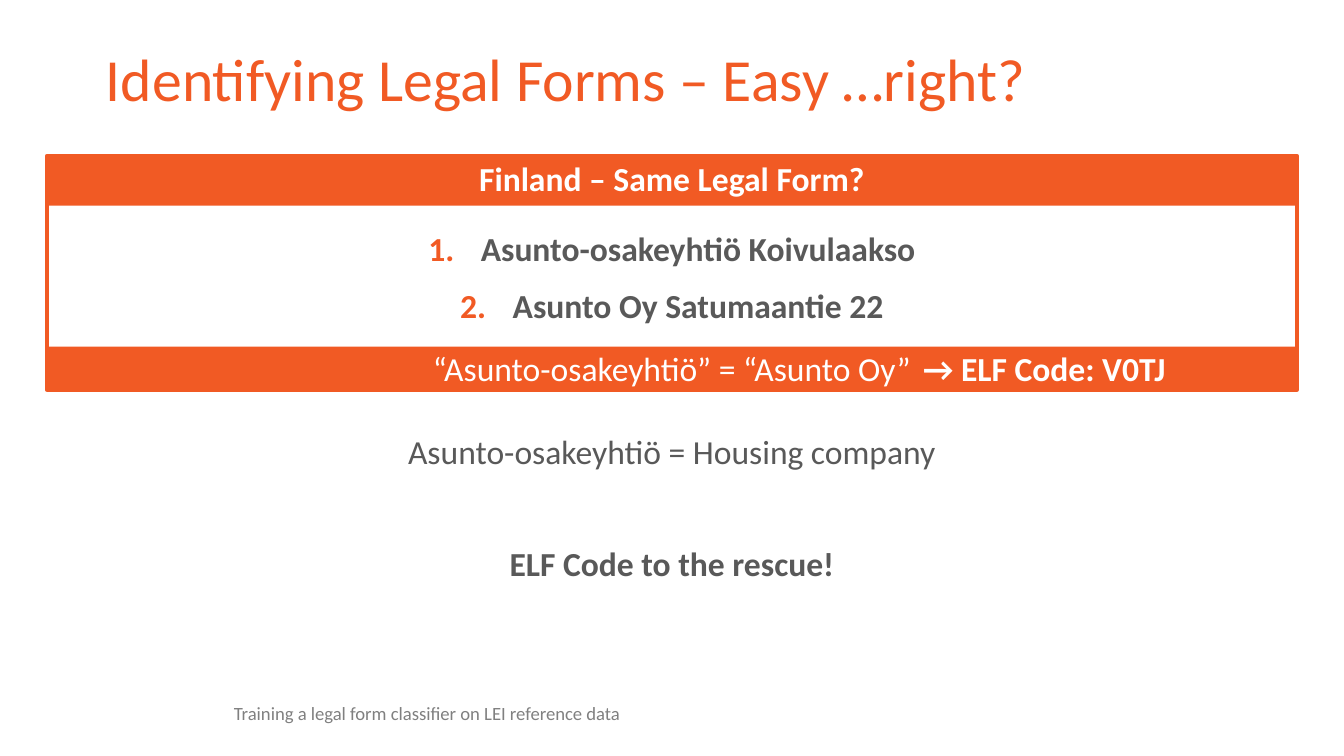
"""Builds a slide on Finnish legal forms and their shared ELF code."""
from lxml.etree import SubElement
from pptx import Presentation
from pptx.dml.color import RGBColor
from pptx.enum.shapes import MSO_SHAPE
from pptx.enum.text import MSO_ANCHOR, PP_ALIGN
from pptx.oxml.ns import qn
from pptx.util import Inches, Pt

HUES = {"orange": "F15A24", "grey": "595959", "pale": "808080", "white": "FFFFFF"}

deck = Presentation()
deck.slide_width = Inches(10)
deck.slide_height = deck.slide_width * 9 // 16
slide = deck.slides.add_slide(deck.slide_layouts[6])
unit = deck.slide_width / 100
left, wide = 3.5, 93


def hue(name):
    return RGBColor.from_string(HUES[name])


def write(shape, lines, color, size=18, bold=False, align=PP_ALIGN.CENTER, gap=1.0, **frame):
    for key, value in {"word_wrap": True, **frame}.items():
        setattr(shape.text_frame, key, value)
    for i, line in enumerate(lines):
        para = shape.text_frame.paragraphs[0] if i == 0 else shape.text_frame.add_paragraph()
        para.alignment, para.line_spacing = align, gap
        run = para.add_run()
        run.text = line
        for key, value in {"name": "Calibri", "size": Pt(size), "bold": bold}.items():
            setattr(run.font, key, value)
        run.font.color.rgb = hue(color)


panels = {}
for name, top, high in [("frame", 11.6, 17.4), ("head", 11.6, 3.7), ("band", 25.8, 3.2)]:
    panel = slide.shapes.add_shape(
        MSO_SHAPE.RECTANGLE, *(int(n * unit) for n in (left, top, wide, high)))
    panel.shadow.inherit = False
    if name == "frame":
        panel.fill.background()
        panel.line.color.rgb, panel.line.width = hue("orange"), Pt(2.25)
    else:
        panel.fill.solid()
        panel.fill.fore_color.rgb = hue("orange")
        panel.line.fill.background()
    panels[name] = panel

write(panels["head"], ["Finland – Same Legal Form?"], "white", bold=True, gap=0.9,
      vertical_anchor=MSO_ANCHOR.MIDDLE)
write(panels["band"], ["“Asunto-osakeyhtiö” = “Asunto Oy”"], "white",
      vertical_anchor=MSO_ANCHOR.MIDDLE)
write(panels["frame"], ["Asunto-osakeyhtiö Koivulaakso", "Asunto Oy Satumaantie 22"],
      "grey", bold=True, gap=0.9, vertical_anchor=MSO_ANCHOR.TOP,
      margin_left=0, margin_right=0, margin_top=Inches(0.57), margin_bottom=0)

for i, para in enumerate(panels["frame"].text_frame.paragraphs):
    para.space_before, para.space_after = Pt(9 * i), Pt(2)
    props = para._p.get_or_add_pPr()
    props.set("marL", str(Inches(0.39)))
    props.set("indent", str(-Inches(0.39)))
    tint = SubElement(props, qn("a:buClr"))
    SubElement(tint, qn("a:srgbClr")).set("val", HUES["orange"])
    SubElement(props, qn("a:buAutoNum")).set("type", "arabicPeriod")

flush = {"margin_left": 0, "margin_right": 0, "margin_top": 0, "margin_bottom": 0}
notes = [
    ((6.9, 3, 86.2, 6.3), "Identifying Legal Forms – Easy …right?", "orange",
     {"size": 32, "align": PP_ALIGN.LEFT, "gap": 0.9, "vertical_anchor": MSO_ANCHOR.MIDDLE}),
    ((17.4, 52.1, 30.3, 1.8), "Training a legal form classifier on LEI reference data", "pale",
     {"size": 10, "align": PP_ALIGN.LEFT, "gap": 0.9, "vertical_anchor": MSO_ANCHOR.BOTTOM,
      **flush}),
    ((22.2, 31.6, 55.6, 7.1), "Asunto-osakeyhtiö = Housing company", "grey", {}),
    ((26.6, 39.9, 46.8, 4), "ELF Code to the rescue!", "grey", {"bold": True}),
    ((67.7, 25.4, 28.8, 4), "→ ELF Code: V0TJ", "white",
     {"bold": True, "align": PP_ALIGN.LEFT}),
]
for place, words, color, form in notes:
    box = slide.shapes.add_textbox(*(int(n * unit) for n in place))
    write(box, [words], color, **form)

deck.save("out.pptx")
